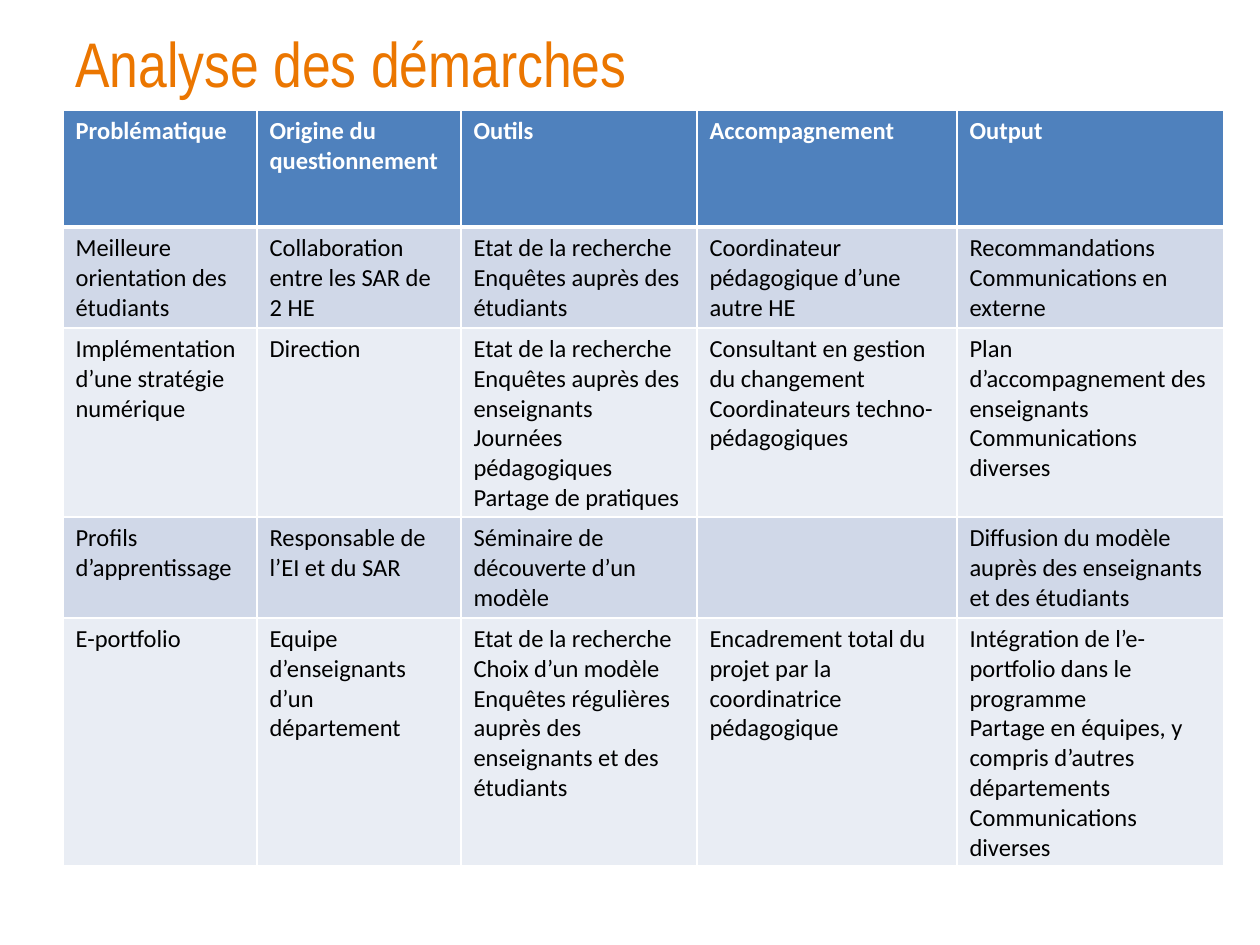
from dataclasses import dataclass

from lxml import etree
from pptx import Presentation
from pptx import util as u
from pptx.dml.color import RGBColor
from pptx.enum import text
from pptx.oxml import ns

PX = 914400 // 126


@dataclass(frozen=True)
class Theme:
    title_color: str = "EB7600"
    header_fill: str = "4F81BD"
    header_color: str = "FFFFFF"
    body_color: str = "000000"
    bands: tuple = ("D0D8E8", "E9EDF4")
    border: str = "FFFFFF"
    title_font: str = "Arial Narrow"
    body_font: str = "Calibri"
    title_size: int = 36
    body_size: int = 14
    thin: int = 1
    thick: int = 3


T = Theme()
COL_WIDTHS = (194, 204, 236, 260, 267)
HEADER_HEIGHT, ROW_HEIGHT = 117, 73

# Each line of a cell is one paragraph
ROWS = [
    ["Problématique", "Origine du questionnement", "Outils",
     "Accompagnement", "Output"],
    ["Meilleure orientation des étudiants",
     "Collaboration entre les SAR de 2 HE",
     "Etat de la recherche\nEnquêtes auprès des étudiants",
     "Coordinateur pédagogique d’une autre HE",
     "Recommandations\nCommunications en externe"],
    ["Implémentation d’une stratégie numérique",
     "Direction",
     "Etat de la recherche\nEnquêtes auprès des enseignants\n"
     "Journées pédagogiques\nPartage de pratiques",
     "Consultant en gestion du changement\nCoordinateurs techno-pédagogiques",
     "Plan d’accompagnement des enseignants\nCommunications diverses"],
    ["Profils d’apprentissage",
     "Responsable de l’EI et du SAR",
     "Séminaire de découverte d’un modèle",
     "",
     "Diffusion du modèle auprès des enseignants et des étudiants"],
    ["E-portfolio",
     "Equipe d’enseignants d’un département",
     "Etat de la recherche\nChoix d’un modèle\n"
     "Enquêtes régulières auprès des enseignants et des étudiants",
     "Encadrement total du projet par la coordinatrice pédagogique",
     "Intégration de l’e-portfolio dans le programme\n"
     "Partage en équipes, y compris d’autres départements\n"
     "Communications diverses"],
]


def px(n):
    return u.Emu(n * PX)


def write(tf, content, color, **fmt):
    """Fill a text frame, one paragraph per line."""
    for i, line in enumerate(content.split("\n")):
        p = tf.paragraphs[0] if i == 0 else tf.add_paragraph()
        if not line:
            continue
        r = p.add_run()
        r.text = line
        for name, value in fmt.items():
            setattr(r.font, name, value)
        r.font.color.rgb = RGBColor.from_string(color)


def add_title(s, content):
    sp = s.shapes.add_textbox(px(63), px(18), px(1134), px(157))
    tf = sp.text_frame
    tf.word_wrap = True
    tf.vertical_anchor = text.MSO_ANCHOR.TOP
    write(tf, content, T.title_color, name=T.title_font, size=u.Pt(T.title_size))


def set_borders(cell, **widths):
    """Draw the left, right, top and bottom lines (L, R, T, B), in points."""
    tc_pr = cell._tc.get_or_add_tcPr()
    for side, width in widths.items():
        ln = etree.SubElement(tc_pr, ns.qn(f"a:ln{side}"), w=str(u.Pt(width)))
        fill = etree.SubElement(ln, ns.qn("a:solidFill"))
        etree.SubElement(fill, ns.qn("a:srgbClr"), val=T.border)


def format_cell(cell, row, content):
    header = row == 0
    # The rule under the header is shared with the first body row
    set_borders(cell, L=T.thin, R=T.thin,
                T=T.thick if row == 1 else T.thin,
                B=T.thick if header else T.thin)
    cell.fill.solid()
    fill = T.header_fill if header else T.bands[(row - 1) % 2]
    cell.fill.fore_color.rgb = RGBColor.from_string(fill)
    write(cell.text_frame, content,
          T.header_color if header else T.body_color,
          name=T.body_font, size=u.Pt(T.body_size), bold=header)


def add_grid(s, rows):
    frame = s.shapes.add_table(len(rows), len(COL_WIDTHS), px(63), px(110),
                               px(sum(COL_WIDTHS)), px(756))
    table = frame.table
    for col, width in zip(table.columns, COL_WIDTHS):
        col.width = px(width)
    for i, row in enumerate(rows):
        table.rows[i].height = px(ROW_HEIGHT if i else HEADER_HEIGHT)
        for j, content in enumerate(row):
            format_cell(table.cell(i, j), i, content)
    frame.height = px(756)


def main():
    prs = Presentation()
    prs.slide_width, prs.slide_height = px(1260), px(945)
    s = prs.slides.add_slide(prs.slide_layouts[6])
    # Heading, then the comparison table
    add_title(s, "Analyse des démarches")
    add_grid(s, ROWS)
    prs.save("out.pptx")


if __name__ == "__main__":
    main()
